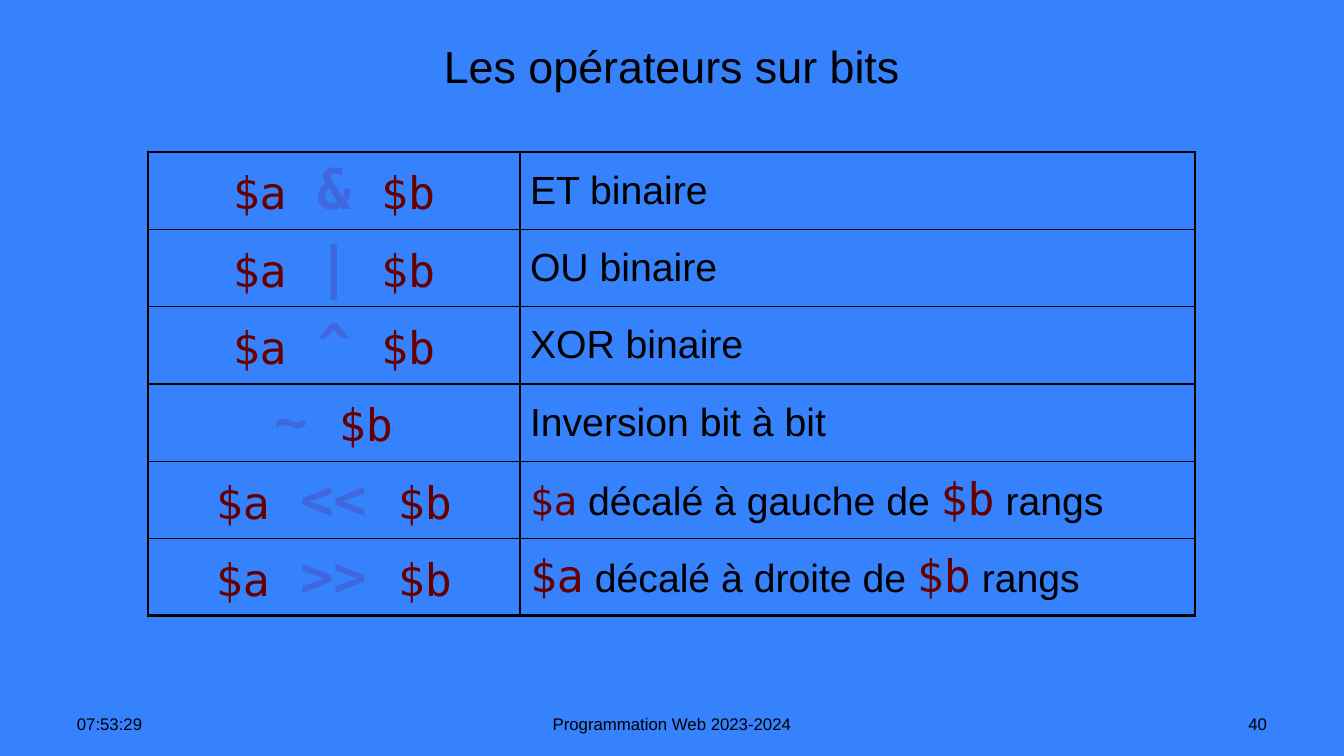
import pptx
import pptx.dml.color
import pptx.enum.text
import pptx.oxml.ns
import pptx.util
from lxml import etree

EMU_PER_PX = 9144000 / 1008
SANS, MONO = "Arial", "DejaVu Sans Mono"
BACKGROUND, BLACK, OPERAND, OPERATOR = "3681FC", "000000", "660000", "3F68DF"
ALIGN = pptx.enum.text.PP_ALIGN
ANCHOR = pptx.enum.text.MSO_ANCHOR
OUTER_LINE, INNER_LINE = 2.25, 1

# First column: left operand, operator, right operand
EXPRESSIONS = [
    ("$a", "&", "$b"),
    ("$a", "|", "$b"),
    ("$a", "^", "$b"),
    ("", "~", "$b"),
    ("$a", "<<", "$b"),
    ("$a", ">>", "$b"),
]


def px(length):
    return pptx.util.Emu(round(length * EMU_PER_PX))


def color(value):
    return pptx.dml.color.RGBColor.from_string(value)


def set_font(font, size, name=SANS, fill=BLACK, bold=False):
    font.size = pptx.util.Pt(size)
    font.name = name
    font.bold = bold
    font.color.rgb = color(fill)


def add_label(slide, text, left, top, width, height, size, align, anchor):
    box = slide.shapes.add_textbox(px(left), px(top), px(width), px(height))
    frame = box.text_frame
    frame.word_wrap = True
    frame.vertical_anchor = anchor
    paragraph = frame.paragraphs[0]
    paragraph.text = text
    paragraph.alignment = align
    set_font(paragraph.font, size)


def add_run(paragraph, text, *style):
    run = paragraph.add_run()
    run.text = text
    set_font(run.font, *style)


def write_expression(paragraph, left, operator, right):
    paragraph.alignment = ALIGN.CENTER
    if left:
        add_run(paragraph, left, 32, MONO, OPERAND)
        add_run(paragraph, " ", 36, MONO, BLACK, True)
    add_run(paragraph, operator, 40, MONO, OPERATOR, True)
    add_run(paragraph, " ", 36, MONO, BLACK, True)
    add_run(paragraph, right, 32, MONO, OPERAND)


def write_shift(paragraph, direction, first_size):
    add_run(paragraph, "$a", first_size, MONO, OPERAND)
    add_run(paragraph, f" décalé à {direction} de ", 28)
    add_run(paragraph, "$b", 32, MONO, OPERAND)
    add_run(paragraph, " rangs", 28)


def set_borders(cell, outer_sides):
    properties = cell._tc.get_or_add_tcPr()
    for side in "LRTB":
        width = OUTER_LINE if side in outer_sides else INNER_LINE
        line = etree.SubElement(properties, pptx.oxml.ns.qn(f"a:ln{side}"),
                                w=str(pptx.util.Pt(width)))
        fill = etree.SubElement(line, pptx.oxml.ns.qn("a:solidFill"))
        etree.SubElement(fill, pptx.oxml.ns.qn("a:srgbClr"), val=BLACK)


def add_operator_table(slide):
    row_count, row_height = len(EXPRESSIONS), 75
    column_widths = (372, 675)
    table = slide.shapes.add_table(
        row_count, 2, px(148), px(152),
        px(sum(column_widths)), px(row_count * row_height)).table
    table.first_row = table.horz_banding = False
    for column, width in zip(table.columns, column_widths):
        column.width = px(width)

    # Frame and cell format
    for index, row in enumerate(table.rows):
        row.height = px(row_height)
        edge = {0: "T", row_count - 1: "B"}.get(index, "")
        for cell, side in zip(row.cells, "LR"):
            set_borders(cell, side + edge)
            cell.fill.background()
            cell.vertical_anchor = ANCHOR.MIDDLE

    # Expressions
    for index, expression in enumerate(EXPRESSIONS):
        write_expression(table.cell(index, 0).text_frame.paragraphs[0], *expression)

    # Meanings
    meanings = [table.cell(index, 1).text_frame.paragraphs[0]
                for index in range(row_count)]
    names = ("ET binaire", "OU binaire", "XOR binaire", "Inversion bit à bit")
    for paragraph, name in zip(meanings, names):
        paragraph.text = name
        set_font(paragraph.font, 28)
    write_shift(meanings[4], "gauche", 28)
    write_shift(meanings[5], "droite", 32)


def main():
    presentation = pptx.Presentation()
    presentation.slide_width, presentation.slide_height = px(1344), px(756)
    slide = presentation.slides.add_slide(presentation.slide_layouts[6])
    slide.background.fill.solid()
    slide.background.fill.fore_color.rgb = color(BACKGROUND)

    # Title and table
    add_label(slide, "Les opérateurs sur bits", 67, 30, 1210, 72, 32,
              ALIGN.CENTER, ANCHOR.MIDDLE)
    add_operator_table(slide)

    # Footer
    for text, left, width, align in (
        ("07:53:29", 67, 314, ALIGN.LEFT),
        ("Programmation Web 2023-2024", 459, 426, ALIGN.CENTER),
        ("40", 963, 314, ALIGN.RIGHT),
    ):
        add_label(slide, text, left, 712, width, 27, 12, align, ANCHOR.BOTTOM)

    presentation.save("out.pptx")


if __name__ == "__main__":
    main()
